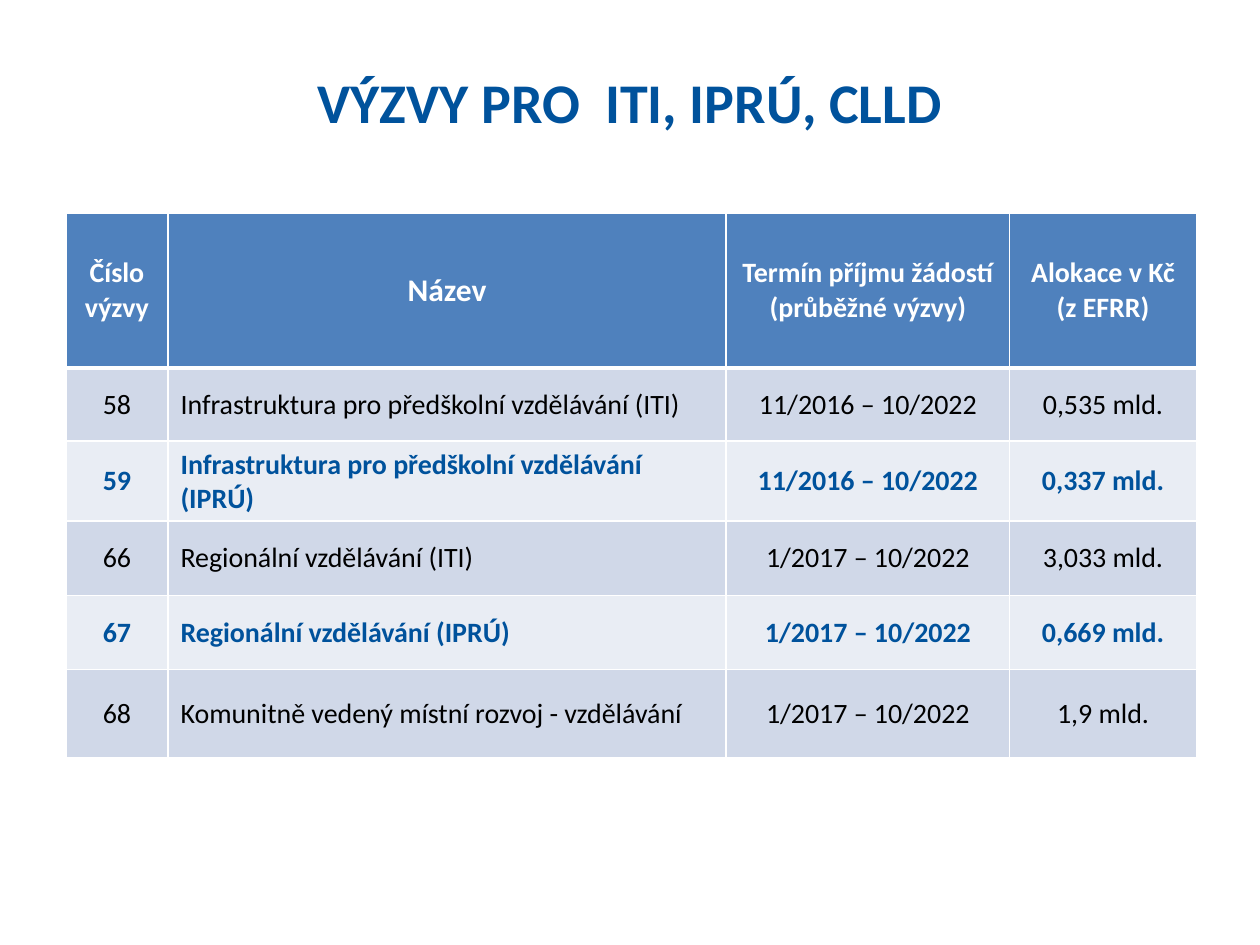
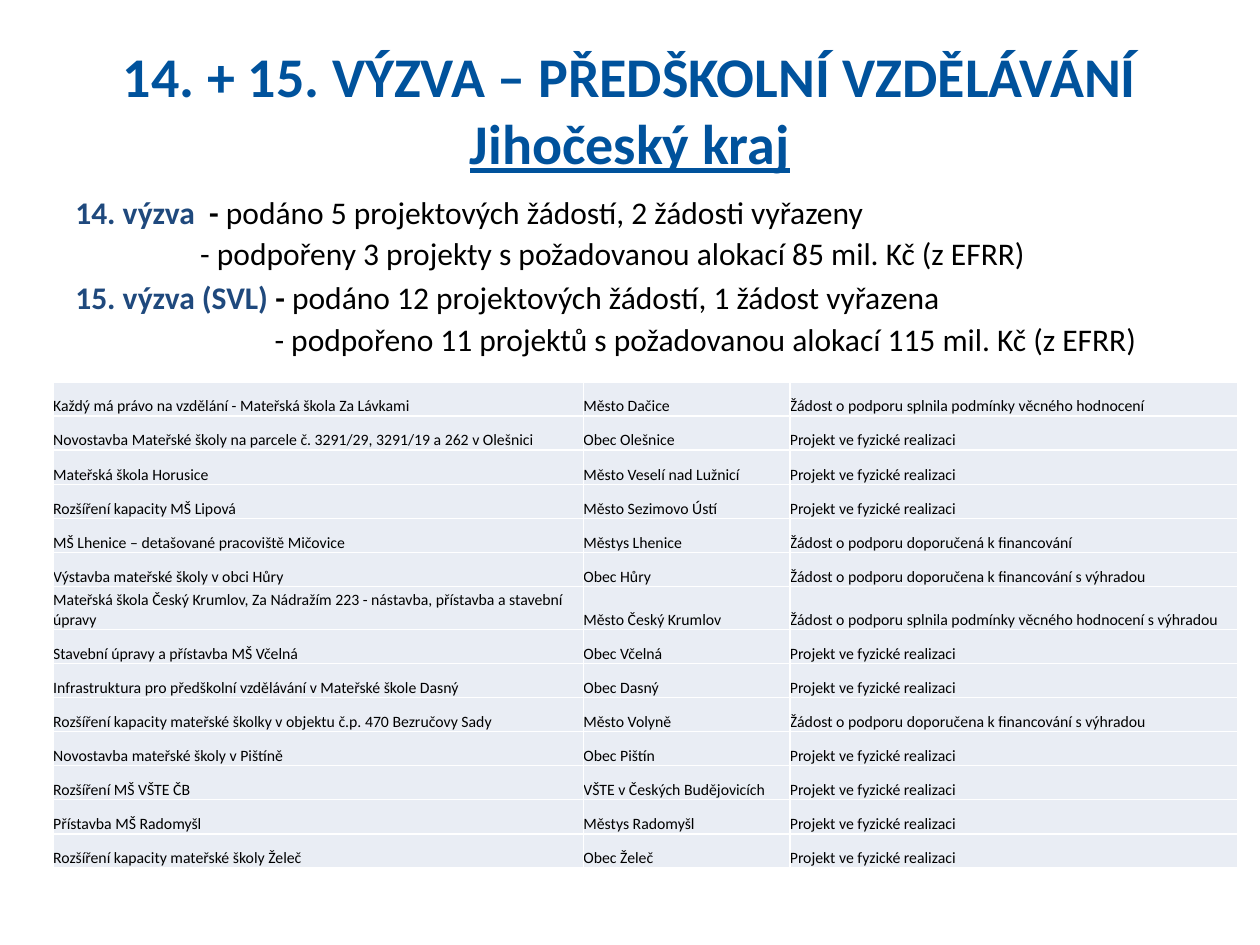
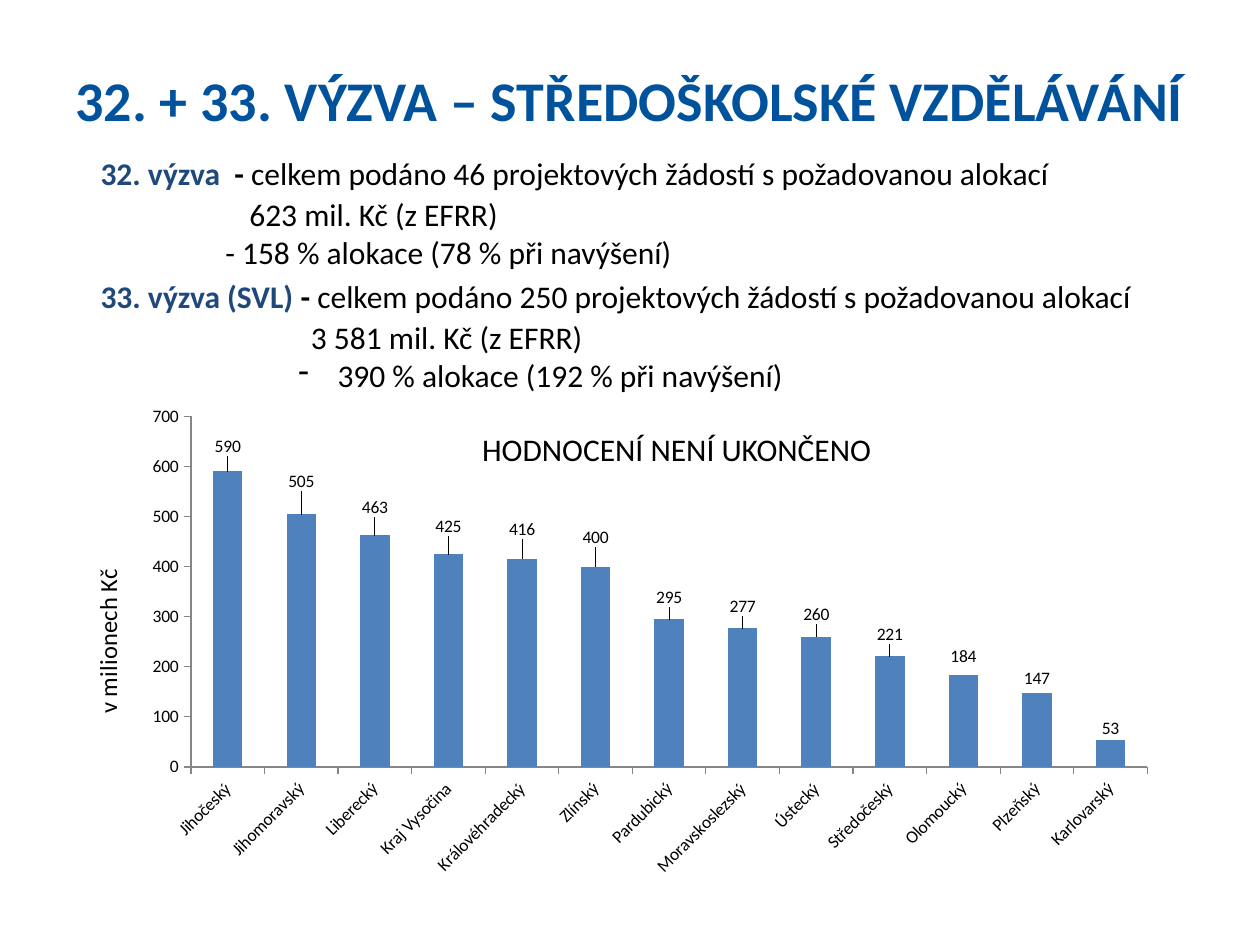
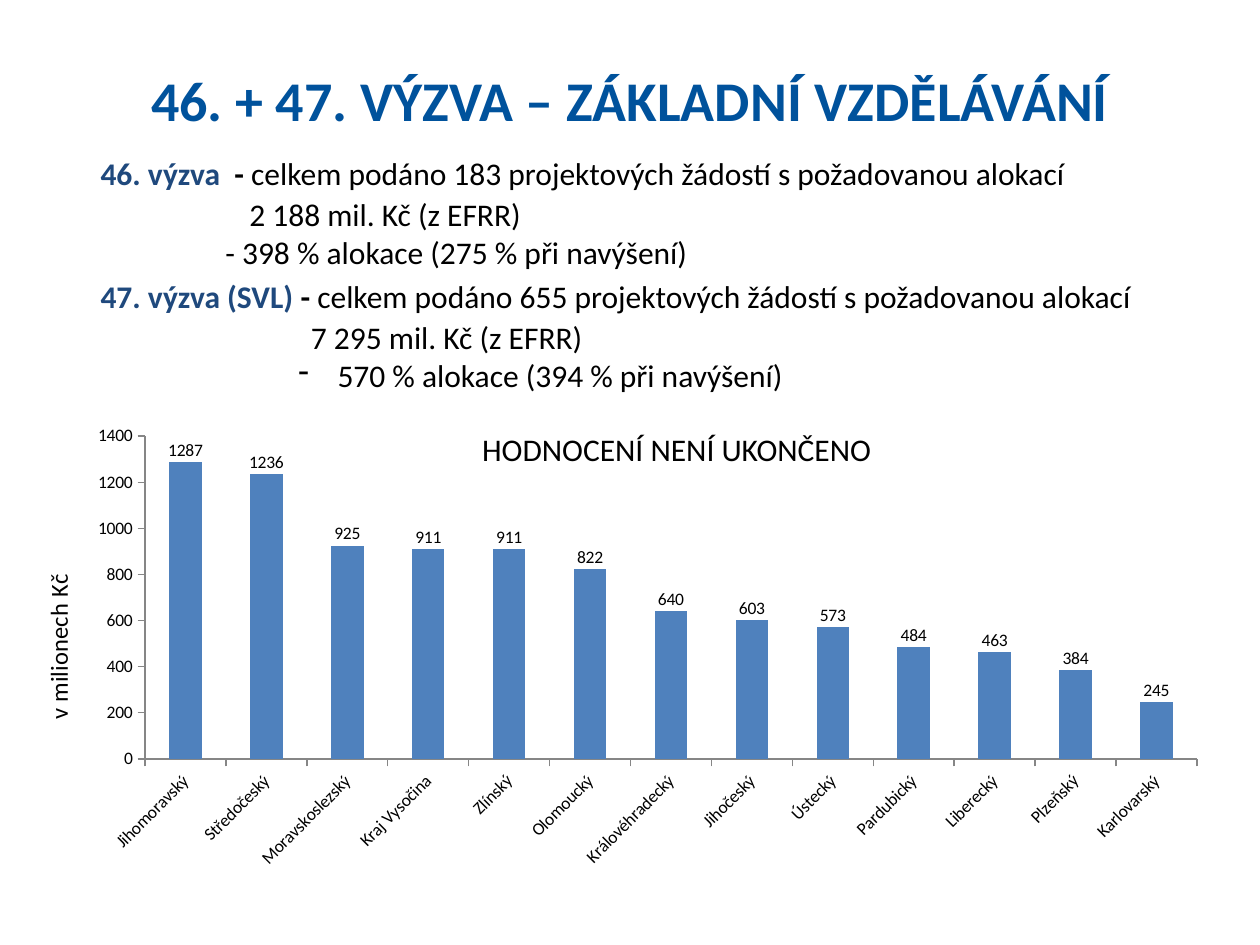
from dataclasses import dataclass
from typing import NamedTuple

import pptx
import pptx.chart.data
import pptx.dml.color
import pptx.enum.chart
import pptx.enum.text
import pptx.oxml
import pptx.oxml.ns
import pptx.util

Pt = pptx.util.Pt
RGB = pptx.dml.color.RGBColor
Align = pptx.enum.text.PP_ALIGN
Anchor = pptx.enum.text.MSO_ANCHOR
qn = pptx.oxml.ns.qn


# Theme
@dataclass(frozen=True)
class Theme:
    font: str = "Calibri"
    title_color: RGB = RGB(0x00, 0x52, 0x9C)
    label_color: RGB = RGB(0x1F, 0x49, 0x7D)
    accent: RGB = RGB(0x4F, 0x81, 0xBD)
    band_dark: RGB = RGB(0xD0, 0xD8, 0xE8)
    band_light: RGB = RGB(0xE9, 0xED, 0xF4)
    axis: RGB = RGB(0x86, 0x86, 0x86)
    black: RGB = RGB(0, 0, 0)
    white: RGB = RGB(0xFF, 0xFF, 0xFF)
    title_size: float = 32
    body_size: float = 18
    cell_size: float = 16
    small_cell_size: float = 9
    axis_title_size: float = 14
    chart_size: float = 10


THEME = Theme()


class Box(NamedTuple):
    left: float
    top: float
    width: float
    height: float

    def lengths(self) -> list:
        return [Pt(value) for value in self]


class Line(NamedTuple):
    """A body line: an optional bold label and dash, then plain text."""
    text: str
    margin: float
    indent: float = 0
    label: str = ""
    dash: str = ""
    before: float = 0
    after: float = 0
    bullet: str = ""


class CellStyle(NamedTuple):
    fill: RGB
    color: RGB
    size: float
    bold: bool = False
    align: Align = Align.LEFT
    anchor: Anchor = Anchor.MIDDLE
    inset: float | None = None
    top_border: float = 1
    bottom_border: float = 1


class RegionChart(NamedTuple):
    box: Box
    plot: tuple[float, float, float, float]
    regions: dict[str, int]
    lifts: list[float]  # label height above each bar, in points
    maximum: int
    step: int


class Call(NamedTuple):
    """Figures of one call for projects."""
    number: int
    applications: int
    amount: str
    share: str


# Drawing functions
def style_font(font, size: float, color: RGB, bold: bool = False) -> None:
    font.name, font.size, font.bold = THEME.font, Pt(size), bold
    font.color.rgb = color


def add_frame(page, box: Box):
    frame = page.shapes.add_textbox(*box.lengths()).text_frame
    frame.word_wrap = True
    return frame


def add_title(page, box: Box, text: str, underlined: str = "") -> None:
    frame = add_frame(page, box)
    frame.vertical_anchor = Anchor.MIDDLE
    para = frame.paragraphs[0]
    para.alignment = Align.CENTER
    style_font(para.font, THEME.title_size, THEME.title_color, True)
    para.add_run().text = text
    if underlined:
        para.add_line_break()
        span = para.add_run()
        span.text = underlined
        span.font.underline = True


def add_body(page, box: Box, lines: list[Line]) -> None:
    frame = add_frame(page, box)
    for index, line in enumerate(lines):
        para = frame.add_paragraph() if index else frame.paragraphs[0]
        properties = para._p.get_or_add_pPr()
        properties.set("marL", str(Pt(line.margin)))
        properties.set("indent", str(Pt(line.indent)))
        if line.bullet:
            bullet = properties.makeelement(qn("a:buChar"), {"char": line.bullet})
            properties.append(bullet)
        para.space_before = Pt(line.before if index else 0)
        para.space_after = Pt(line.after)
        style_font(para.font, THEME.body_size, THEME.black)
        for text, color in ((line.label, THEME.label_color), (line.dash, THEME.black)):
            if text:
                span = para.add_run()
                span.text = text
                span.font.bold = True
                span.font.color.rgb = color
        para.add_run().text = line.text


def add_border(cell, side: str, width: float) -> None:
    cell._tc.get_or_add_tcPr().append(pptx.oxml.parse_xml(
        f'<a:{side} xmlns:a="http://schemas.openxmlformats.org/drawingml/2006/main"'
        f' w="{Pt(width)}"><a:solidFill><a:srgbClr val="{THEME.white}"/>'
        f'</a:solidFill></a:{side}>'))


def fill_cell(cell, text: str, style: CellStyle) -> None:
    for side, width in (("lnL", 1), ("lnR", 1), ("lnT", style.top_border),
                        ("lnB", style.bottom_border)):
        add_border(cell, side, width)
    cell.fill.solid()
    cell.fill.fore_color.rgb = style.fill
    cell.vertical_anchor = style.anchor
    if style.inset is not None:
        cell.margin_left = cell.margin_right = Pt(style.inset)
        cell.margin_top = cell.margin_bottom = Pt(style.inset)
    cell.text_frame.text = text
    for para in cell.text_frame.paragraphs:
        para.alignment = style.align
        style_font(para.font, style.size, style.color, style.bold)


def add_grid(page, left: float, top: float, widths: list[float],
             heights: list[float], has_header: bool):
    box = Box(left, top, sum(widths), sum(heights))
    table = page.shapes.add_table(len(heights), len(widths), *box.lengths()).table
    table.first_row, table.horz_banding = has_header, False
    for column, width in zip(table.columns, widths):
        column.width = Pt(width)
    for row, height in zip(table.rows, heights):
        row.height = Pt(height)
    return table


def chart_layout(inner: bool = False, **places: float):
    target = '<c:layoutTarget val="inner"/>' if inner else ""
    modes = '<c:xMode val="edge"/><c:yMode val="edge"/>' if inner else ""
    values = "".join(f'<c:{key} val="{value:.3f}"/>' for key, value in places.items())
    return pptx.oxml.parse_xml(
        '<c:layout xmlns:c="http://schemas.openxmlformats.org/drawingml/2006/chart">'
        f'<c:manualLayout>{target}{modes}{values}</c:manualLayout></c:layout>')


def add_region_chart(page, data: RegionChart) -> None:
    kinds = pptx.enum.chart
    chart_data = pptx.chart.data.CategoryChartData(number_format="0")
    chart_data.categories = list(data.regions)
    chart_data.add_series("Series 1", list(data.regions.values()))
    chart = page.shapes.add_chart(kinds.XL_CHART_TYPE.COLUMN_STACKED,
                                  *data.box.lengths(), chart_data).chart
    chart.has_legend = chart.has_title = False
    style_font(chart.font, THEME.chart_size, THEME.black)

    # Bars and plot area
    plot = chart.plots[0]
    plot.gap_width, plot.overlap, plot.vary_by_categories = 150, 100, False
    series = plot.series[0]
    series.format.fill.solid()
    series.format.fill.fore_color.rgb = THEME.accent
    area = chart._chartSpace.chart.plotArea
    for layout in area.findall(qn("c:layout")):
        area.remove(layout)
    area.insert(0, chart_layout(True, **dict(zip("xywh", data.plot))))

    # Labels raised from the inside end to above each bar
    half_label = 6
    for index in range(len(data.regions)):
        series.points[index].data_label.position = kinds.XL_LABEL_POSITION.INSIDE_END
    for label, lift in zip(area.iter(qn("c:dLbl")), data.lifts):
        label.insert(1, chart_layout(x=0, y=-(lift + half_label) / data.box.height))

    # Axes
    for axis in (chart.category_axis, chart.value_axis):
        axis.has_major_gridlines = False
        axis.major_tick_mark = kinds.XL_TICK_MARK.OUTSIDE
        axis.minor_tick_mark = kinds.XL_TICK_MARK.NONE
        axis.format.line.color.rgb = THEME.axis
        axis.format.line.width = Pt(0.75)
        style_font(axis.tick_labels.font, THEME.chart_size, THEME.black)
    chart.category_axis._element.txPr.bodyPr.set("rot", "-2700000")
    values = chart.value_axis
    values.minimum_scale, values.maximum_scale = 0, data.maximum
    values.major_unit = data.step
    values.tick_labels.number_format = "0"
    values.tick_labels.number_format_is_linked = False
    values.axis_title.text_frame.text = "v milionech Kč"
    style_font(values.axis_title.text_frame.paragraphs[0].font,
               THEME.axis_title_size, THEME.black)


# Slide 1: overview of the calls
CALL_HEADERS = ["Číslo výzvy", "Název", "Termín příjmu žádostí\n(průběžné výzvy)",
                "Alokace v Kč\n(z EFRR)"]
CALL_ROWS = [
    ("58", "Infrastruktura pro předškolní vzdělávání (ITI)", "11/2016 – 10/2022", "0,535 mld."),
    ("59", "Infrastruktura pro předškolní vzdělávání (IPRÚ)", "11/2016 – 10/2022", "0,337 mld."),
    ("66", "Regionální vzdělávání (ITI)", "1/2017 – 10/2022", "3,033 mld."),
    ("67", "Regionální vzdělávání (IPRÚ)", "1/2017 – 10/2022", "0,669 mld."),
    ("68", "Komunitně vedený místní rozvoj - vzdělávání", "1/2017 – 10/2022", "1,9 mld."),
]


def build_overview(page) -> None:
    add_title(page, Box(36, 19, 648, 78), "VÝZVY PRO  ITI, IPRÚ, CLLD")
    table = add_grid(page, 37.7, 121.7, [58.3, 319, 162, 106.7],
                     [88.6, 41.8, 44.6, 42.5, 42.5, 50.4], True)
    header = CellStyle(THEME.accent, THEME.white, THEME.cell_size, True, Align.CENTER,
                       bottom_border=3)
    plain = CellStyle(THEME.band_dark, THEME.black, THEME.cell_size, align=Align.CENTER)
    marked = CellStyle(THEME.band_light, THEME.title_color, THEME.cell_size, True,
                       Align.CENTER)
    for column, text in enumerate(CALL_HEADERS):
        size = THEME.body_size if text == "Název" else THEME.cell_size
        fill_cell(table.cell(0, column), text, header._replace(size=size))
    for row, texts in enumerate(CALL_ROWS, 1):
        style = plain if row % 2 else marked
        style = style._replace(top_border=3 if row == 1 else 1)
        for column, text in enumerate(texts):
            align = Align.LEFT if column == 1 else Align.CENTER
            fill_cell(table.cell(row, column), text, style._replace(align=align))


# Slide 2: preschool projects
RUNNING = "Projekt ve fyzické realizaci"
RATED = "Žádost o podporu splnila podmínky věcného hodnocení"
RESERVED = "Žádost o podporu doporučena k financování s výhradou"
PROJECTS = [
    ("Každý má právo na vzdělání - Mateřská škola Za Lávkami", "Město Dačice", RATED),
    ("Novostavba Mateřské školy na parcele č. 3291/29, 3291/19 a 262 v Olešnici",
     "Obec Olešnice", RUNNING),
    ("Mateřská škola Horusice", "Město Veselí nad Lužnicí", RUNNING),
    ("Rozšíření kapacity MŠ Lipová", "Město Sezimovo Ústí", RUNNING),
    ("MŠ Lhenice – detašované pracoviště Mičovice", "Městys Lhenice",
     "Žádost o podporu doporučená k financování"),
    ("Výstavba mateřské školy v obci Hůry", "Obec Hůry", RESERVED),
    ("Mateřská škola Český Krumlov, Za Nádražím 223 - nástavba, přístavba a stavební úpravy",
     "Město Český Krumlov", RATED + " s výhradou"),
    ("Stavební úpravy a přístavba MŠ Včelná", "Obec Včelná", RUNNING),
    ("Infrastruktura pro předškolní vzdělávání v Mateřské škole Dasný", "Obec Dasný", RUNNING),
    ("Rozšíření kapacity mateřské školky v objektu č.p. 470 Bezručovy Sady",
     "Město Volyně", RESERVED),
    ("Novostavba mateřské školy v Pištíně", "Obec Pištín", RUNNING),
    ("Rozšíření MŠ VŠTE ČB", "VŠTE v Českých Budějovicích", RUNNING),
    ("Přístavba MŠ Radomyšl", "Městys Radomyšl", RUNNING),
    ("Rozšíření kapacity mateřské školy Želeč", "Obec Želeč", RUNNING),
]


def build_preschool(page) -> None:
    add_title(page, Box(36, 10, 648, 104.4), "14. + 15. VÝZVA – PŘEDŠKOLNÍ VZDĚLÁVÁNÍ",
              "Jihočeský kraj")
    add_body(page, Box(36, 106.6, 668, 378), [
        Line("podáno 5 projektových žádostí, 2 žádosti vyřazeny", 85, -85,
             "14. výzva", "  - ", after=2),
        Line("- podpořeny 3 projekty s požadovanou alokací 85 mil. Kč (z EFRR)", 85, -13.7),
        Line("podáno 12 projektových žádostí, 1 žádost vyřazena", 85, -85,
             "15. výzva (SVL)", " - ", before=3.6, after=2),
        Line("- podpořeno 11 projektů s požadovanou alokací 115 mil. Kč (z EFRR)", 85, 28.8),
    ])
    heights = [24.5 if len(name) > 80 else 19.5 for name, _, _ in PROJECTS]
    table = add_grid(page, 30.4, 218.3, [303, 118, 255.8], heights, False)
    style = CellStyle(THEME.band_light, THEME.black, THEME.small_cell_size,
                      anchor=Anchor.BOTTOM, inset=0)
    for row, texts in enumerate(PROJECTS):
        for column, text in enumerate(texts):
            fill_cell(table.cell(row, column), text, style)


# Slides 3 and 4: calls with a chart by region
SECONDARY = RegionChart(
    Box(36, 224, 620, 279.4), (0.118, 0.05, 0.882, 0.717),
    {"Jihočeský": 590, "Jihomoravský": 505, "Liberecký": 463, "Kraj Vysočina": 425,
     "Královéhradecký": 416, "Zlínský": 400, "Pardubický": 295, "Moravskoslezský": 277,
     "Ústecký": 260, "Středočeský": 221, "Olomoucký": 184, "Plzeňský": 147,
     "Karlovarský": 53},
    [17, 21, 18, 18, 19, 19, 15, 15, 15, 15, 13, 11, 9], 700, 100)
PRIMARY = RegionChart(
    Box(21, 225.4, 680, 280), (0.091, 0.085, 0.884, 0.659),
    {"Jihomoravský": 1287, "Středočeský": 1236, "Moravskoslezský": 925,
     "Kraj Vysočina": 911, "Zlínský": 911, "Olomoucký": 822, "Královéhradecký": 640,
     "Jihočeský": 603, "Ústecký": 573, "Pardubický": 484, "Liberecký": 463,
     "Plzeňský": 384, "Karlovarský": 245},
    [9] * 13, 1400, 200)


def build_regions(page, level: str, first: Call, second: Call, data: RegionChart) -> None:
    def request(call: Call) -> str:
        return f"celkem podáno {call.applications} projektových žádostí s požadovanou alokací"

    add_title(page, Box(36, 17.2, 648, 78.5),
              f"{first.number}. + {second.number}. VÝZVA – {level} VZDĚLÁVÁNÍ")
    add_body(page, Box(50.4, 84.2, 633.6, 398), [
        Line(request(first), 85, -85, f"{first.number}. výzva", "  - ", after=2),
        Line(f"{first.amount} mil. Kč (z EFRR)", 85),
        Line(f"- {first.share}", 85, -13.7),
        Line(request(second), 120.2, -120.2, f"{second.number}. výzva (SVL) ", "- ",
             before=3.6, after=2),
        Line(f"{second.amount} mil. Kč (z EFRR)", 120.2),
        Line(second.share, 135.4, -22.3, bullet="-"),
        Line("HODNOCENÍ NENÍ UKONČENO", 218, before=21),
    ])
    add_region_chart(page, data)


def main() -> None:
    deck = pptx.Presentation()
    deck.slide_width, deck.slide_height = Pt(720), Pt(540)
    pages = [deck.slides.add_slide(deck.slide_layouts[6]) for _ in range(4)]
    build_overview(pages[0])
    build_preschool(pages[1])
    build_regions(pages[2], "STŘEDOŠKOLSKÉ",
                  Call(32, 46, "623", "158 % alokace (78 % při navýšení)"),
                  Call(33, 250, "3 581", "390 % alokace (192 % při navýšení)"), SECONDARY)
    build_regions(pages[3], "ZÁKLADNÍ",
                  Call(46, 183, "2 188", "398 % alokace (275 % při navýšení)"),
                  Call(47, 655, "7 295", "570 % alokace (394 % při navýšení)"), PRIMARY)
    deck.save("out.pptx")


if __name__ == "__main__":
    main()
